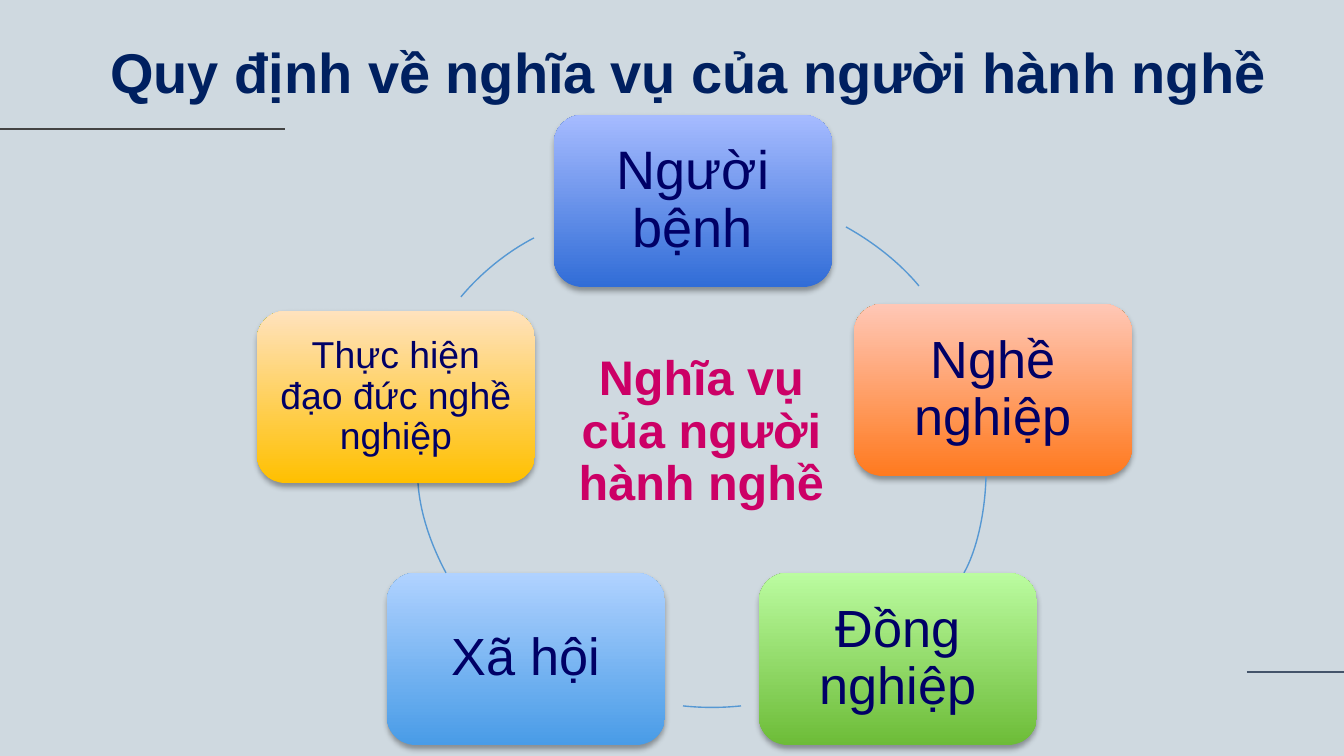
import pptx
import pptx.util
from lxml import etree
from pptx.dml.color import RGBColor
from pptx.enum.shapes import MSO_CONNECTOR, MSO_SHAPE
from pptx.enum.text import MSO_ANCHOR, PP_ALIGN
from pptx.oxml.ns import qn

THEME = {
    "font": "Arial", "back": "CFD9E0", "title": "002060", "label": "000066",
    "core": "CC0066", "arc": "5698D3", "title_pt": 30, "core_pt": 26,
    "arc_pt": 0.75, "rule_pt": 1.5,
}
PX = 914400 / 134.4
WIDE, HIGH = 1344, 756
BOX = (278, 172)
RING = (591, 510)

TITLE = ("Quy định về nghĩa vụ của người hành nghề ", (76, 30, 1241, 88))
CORE = ("Nghĩa vụ của người hành nghề", (565, 347, 273, 172))
RULES = [((1247, 672), (1344, 672), "44546A"), ((-3, 129), (285, 129), "434343")]

# text, left and top, size, inset, low colour, high colour
DUTIES = [
    ("Người bệnh", (554, 115), 29, 16, "316DD7", "A6BBFF"),
    ("Nghề nghiệp", (854, 304), 28, 16, "FF7A1F", "FFC7B6"),
    ("Đồng nghiệp", (759, 573), 28, 16, "6DBC38", "BBFCA0"),
    ("Xã hội", (387, 573), 28, 16, "499CE7", "B0D2FF"),
    ("Thực hiện đạo đức nghề nghiệp", (257, 311), 20, 12, "FFC000", "FFE2BD"),
]
# ring's left and top, then Bezier points of the arc that follows each duty
ARCS = [
    ((470, 196), ((846, 227), (873, 242), (899, 262), (919, 286))),
    ((477, 214), ((986, 477), (985, 515), (976, 552), (964, 573))),
    ((457, 199), ((741, 706), (722, 708), (702, 708), (683, 706))),
    ((417, 199), ((446, 573), (430, 543), (420, 512), (418, 483))),
    ((401, 207), ((461, 297), (481, 273), (507, 252), (534, 238))),
]


def emu(*vals):
    return [round(v * PX) for v in vals]


def rgb(name):
    return RGBColor.from_string(THEME.get(name, name))


def write(shape, text, size, color, inset, anchor, bold=False, space=0.9):
    """Put one centred run in the shape; inset is in px."""
    frame = shape.text_frame
    frame.word_wrap = True
    frame.vertical_anchor = anchor
    gap, = emu(inset)
    frame.margin_left = frame.margin_right = gap
    frame.margin_top = frame.margin_bottom = gap
    para = frame.paragraphs[0]
    para.alignment = PP_ALIGN.CENTER
    para.line_spacing = space
    run = para.add_run()
    run.text = text
    run.font.name = THEME["font"]
    run.font.size = pptx.util.Pt(size)
    run.font.bold = bold
    run.font.color.rgb = rgb(color)


def add_glow(shape):
    """Give the shape a soft shadow straight below it."""
    shape.shadow.inherit = False
    effects = shape._element.spPr.find(qn("a:effectLst"))
    drop = etree.SubElement(effects, qn("a:outerShdw"), blurRad="40000",
                            dist="23000", dir="5400000", rotWithShape="0")
    tint = etree.SubElement(drop, qn("a:srgbClr"), val="000000")
    etree.SubElement(tint, qn("a:alpha"), val="35000")


def add_duty(slide, text, spot, size, inset, low, high):
    box = slide.shapes.add_shape(MSO_SHAPE.ROUNDED_RECTANGLE, *emu(*spot, *BOX))
    box.line.fill.background()
    box.fill.gradient()
    box.fill.gradient_angle = 90
    for stop, color in zip(box.fill.gradient_stops, (low, high)):
        stop.color.rgb = rgb(color)
    add_glow(box)
    write(box, text, size, "label", inset, MSO_ANCHOR.MIDDLE)


def add_arc(slide, spot, curve):
    """Draw a Bezier curve within the frame of its whole ring."""
    pen = slide.shapes.build_freeform(*emu(*curve[0]))
    pen.add_line_segments([emu(*curve[-1])], close=False)
    arc = pen.convert_to_shape()
    arc.left, arc.top, arc.width, arc.height = emu(*spot, *RING)
    track = next(arc._element.iter(qn("a:path")))
    for old in list(track):
        track.remove(old)
    wide, high = emu(*RING)
    track.set("w", str(wide))
    track.set("h", str(high))
    for tag, dots in (("a:moveTo", curve[:1]), ("a:cubicBezTo", curve[1:])):
        part = etree.SubElement(track, qn(tag))
        for dot in dots:
            x, y = emu(dot[0] - spot[0], dot[1] - spot[1])
            etree.SubElement(part, qn("a:pt"), x=str(x), y=str(y))
    arc.shadow.inherit = False
    arc.fill.background()
    arc.line.color.rgb = rgb("arc")
    arc.line.width = pptx.util.Pt(THEME["arc_pt"])


def add_rule(slide, start, end, color):
    rule = slide.shapes.add_connector(MSO_CONNECTOR.STRAIGHT, *emu(*start, *end))
    rule.line.color.rgb = rgb(color)
    rule.line.width = pptx.util.Pt(THEME["rule_pt"])
    etree.SubElement(rule._element.spPr, qn("a:effectLst"))


def main():
    deck = pptx.Presentation()
    deck.slide_width, deck.slide_height = emu(WIDE, HIGH)
    slide = deck.slides.add_slide(deck.slide_layouts[6])
    slide.background.fill.solid()
    slide.background.fill.fore_color.rgb = rgb("back")
    for rule in RULES:
        add_rule(slide, *rule)
    for duty, arc in zip(DUTIES, ARCS):
        add_duty(slide, *duty)
        add_arc(slide, *arc)
    text, area = CORE
    core = slide.shapes.add_textbox(*emu(*area))
    write(core, text, THEME["core_pt"], "core", 7, MSO_ANCHOR.TOP, True)
    text, area = TITLE
    head = slide.shapes.add_textbox(*emu(*area))
    write(head, text, THEME["title_pt"], "title", 13,
          MSO_ANCHOR.BOTTOM, True, 1.0)
    deck.save("out.pptx")


if __name__ == "__main__":
    main()
